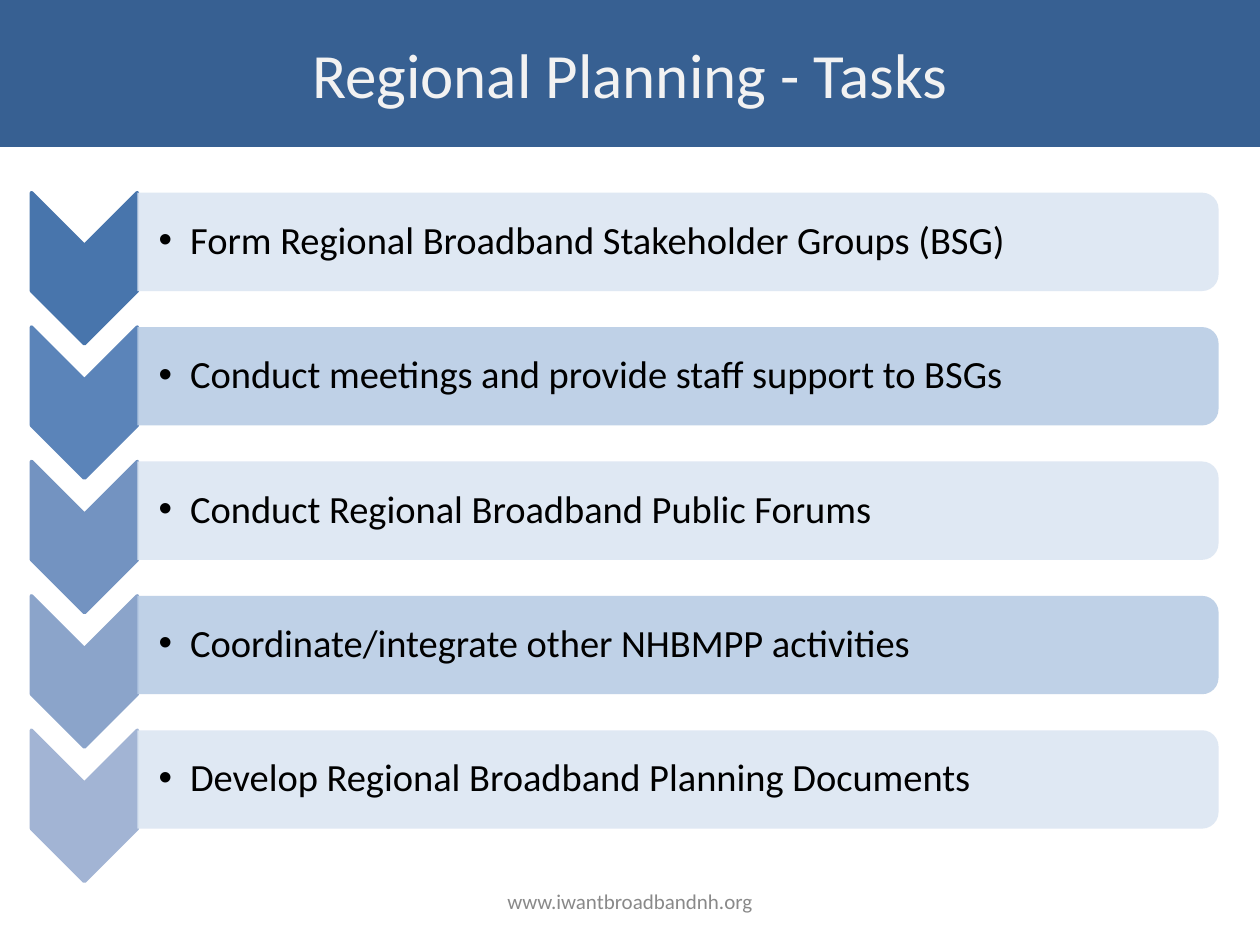
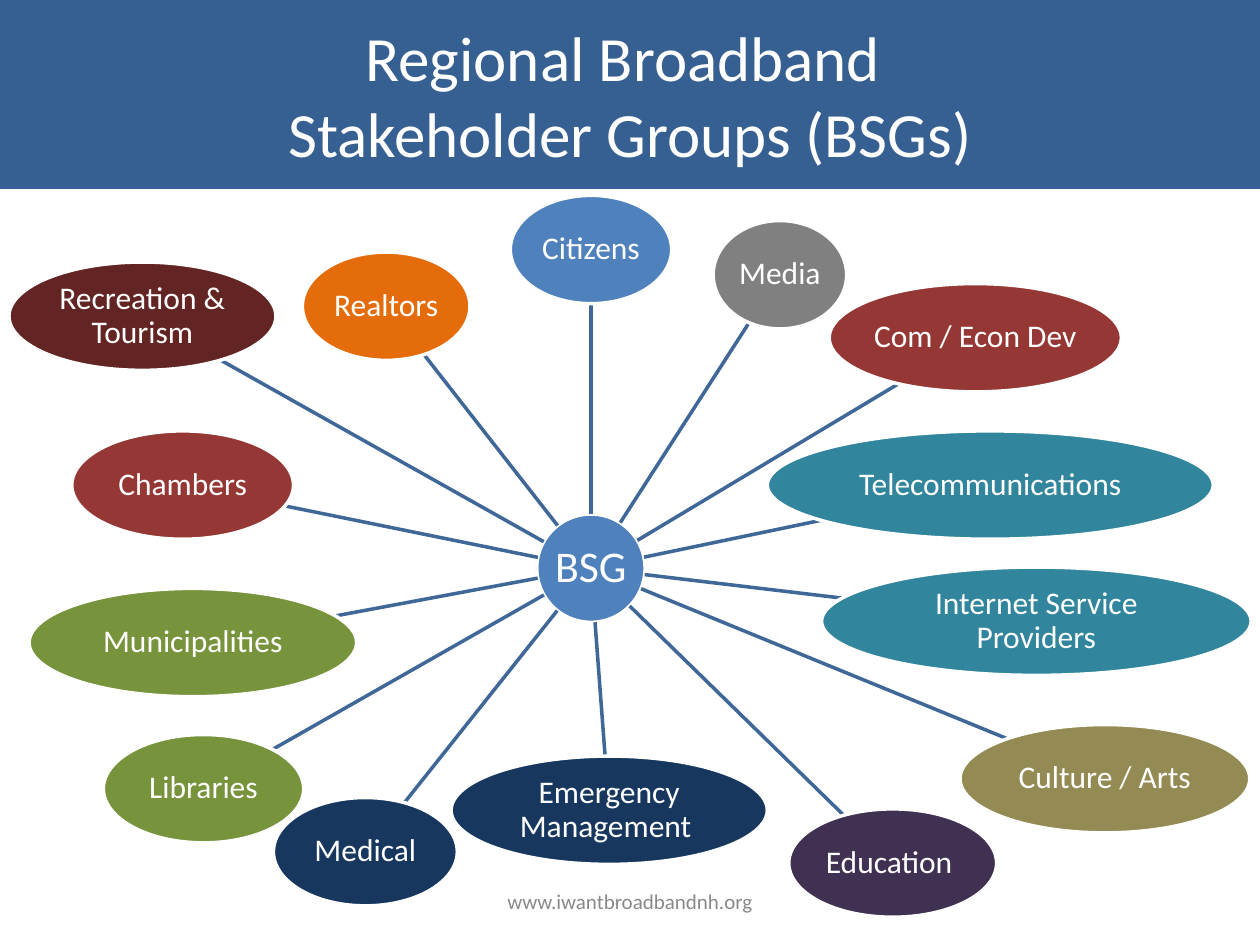
"""Build two slides on regional broadband planning: a task list and a stakeholder map."""
from dataclasses import dataclass
from math import hypot

from lxml import etree
from pptx import Presentation
from pptx.dml import color
from pptx.enum import shapes, text
from pptx.oxml import ns
from pptx.util import Pt

FONT = "Calibri"
WIDE, HIGH = 720, 540
HUE = {
    "band": "376092", "white": "FFFFFF", "pale": "F2F2F2", "black": "000000",
    "foot": "898989", "spoke": "3F6797", "ice": "DCE6F2", "sky": "B9CDE5",
    "blue": "4F81BD", "gray": "808080", "red": "953735", "teal": "31859C",
    "tan": "948A54", "plum": "403152", "navy": "17375E", "green": "77933C",
    "wine": "632523", "gold": "E46C0A",
    "step1": "4875AC", "step2": "5B84B9", "step3": "7393C1",
    "step4": "8BA4CA", "step5": "A2B4D4",
}
KIND = shapes.MSO_SHAPE
MID = text.PP_ALIGN.CENTER

ROW_TOP, ROW_STEP = 138.2, 76.8
BAR_LEFT, BAR_WIDE, BAR_HIGH = 78.5, 617.8, 56.2
TIP_MID, TIP_LONG, TIP_WIDE, TIP_DROP = 48.2, 86.4, 60.5, 15.1
NODE_HIGH = 61.9


@dataclass
class Task:
    label: str
    tip: str
    bar: str


@dataclass
class Node:
    label: str
    x: float
    y: float
    wide: float
    hue: str
    size: float = 18
    inset: float = 0.9

    def edge(self, dx: float, dy: float) -> tuple[float, float]:
        """Return the point where the outline meets the direction (dx, dy)."""
        reach = 1 / hypot(dx / (self.wide / 2), dy / (NODE_HIGH / 2))
        return self.x + dx * reach, self.y + dy * reach


TASKS = [
    Task("Form Regional Broadband Stakeholder Groups (BSG)", "step1", "ice"),
    Task("Conduct meetings and provide staff support to BSGs", "step2", "sky"),
    Task("Conduct Regional Broadband Public Forums", "step3", "ice"),
    Task("Coordinate/integrate other NHBMPP activities", "step4", "sky"),
    Task("Develop Regional Broadband Planning Documents", "step5", "ice"),
]
HUB = Node("BSG", 337.7, 324.7, 61.9, "blue", 25, 1.4)
GROUPS = [
    Node("Citizens", 337.7, 142.6, 92.2, "blue"),
    Node("Media", 445.7, 157, 76.3, "gray"),
    Node("Com / Econ Dev", 557.3, 193, 167, "red"),
    Node("Telecommunications", 565.9, 277.2, 254.9, "teal"),
    Node("Internet Service Providers", 592.2, 355, 245.5, "teal"),
    Node("Culture / Arts", 631.4, 445, 165.6, "tan"),
    Node("Education ", 510.1, 493.2, 118.8, "plum"),
    Node("Emergency Management ", 348.1, 463, 180.7, "navy"),
    Node("Medical", 208.8, 486.7, 105.1, "navy"),
    Node("Libraries", 116.3, 450.7, 114.5, "green"),
    Node("Municipalities", 110.2, 367.2, 187.2, "green"),
    Node("Chambers", 104.4, 277.2, 126.7, "red"),
    Node("Recreation & Tourism", 81.4, 180.7, 152.6, "wine"),
    Node("Realtors", 220.7, 175, 95.8, "gold"),
]


def tint(hue: str) -> color.RGBColor:
    """Return a named colour."""
    return color.RGBColor.from_string(HUE[hue])


def add_block(slide, kind, x: float, y: float, wide: float, high: float,
              hue: str, rim: str | None = None, turn: float = 0):
    """Draw a filled shape around the centre (x, y)."""
    block = slide.shapes.add_shape(
        kind, Pt(x - wide / 2), Pt(y - high / 2), Pt(wide), Pt(high))
    block.shadow.inherit = False
    block.rotation = turn
    block.fill.solid()
    block.fill.fore_color.rgb = tint(hue)
    if rim:
        block.line.color.rgb = tint(rim)
        block.line.width = Pt(2)
    else:
        block.line.fill.background()
    return block


def write(shape, words: str, size: float, hue: str, align=MID,
          space: float | None = None, inset: float | None = None) -> None:
    """Put styled, vertically centred text in a shape."""
    frame = shape.text_frame
    frame.text = words
    frame.word_wrap = True
    frame.vertical_anchor = text.MSO_ANCHOR.MIDDLE
    if inset is not None:
        frame.margin_left = frame.margin_right = Pt(inset)
        frame.margin_top = frame.margin_bottom = Pt(inset)
    for para in frame.paragraphs:
        para.alignment = align
        if space:
            para.line_spacing = space
        for run in para.runs:
            run.font.name = FONT
            run.font.size = Pt(size)
            run.font.color.rgb = tint(hue)


def add_page(deck, title: str, high: float, hue: str):
    """Add a blank slide with its title band and footer."""
    slide = deck.slides.add_slide(deck.slide_layouts[6])
    band = add_block(slide, KIND.RECTANGLE, WIDE / 2, high / 2, WIDE, high, "band")
    write(band, title, 36, hue)
    foot = slide.shapes.add_textbox(Pt(246), Pt(500.4), Pt(228), Pt(28.8))
    write(foot, "www.iwantbroadbandnh.org", 12, "foot")
    return slide


def add_task(slide, task: Task, y: float) -> None:
    """Draw a chevron, its bar and the bulleted task."""
    add_block(slide, KIND.CHEVRON, TIP_MID, y + TIP_DROP, TIP_LONG, TIP_WIDE,
              task.tip, task.tip, 90)
    bar = add_block(slide, KIND.ROUND_2_SAME_RECTANGLE, BAR_LEFT + BAR_WIDE / 2, y,
                    BAR_HIGH, BAR_WIDE, task.bar, turn=90)
    shade = bar.fill._xPr.find(".//" + ns.qn("a:srgbClr"))
    etree.SubElement(shade, ns.qn("a:alpha")).set("val", "90000")
    box = slide.shapes.add_textbox(Pt(BAR_LEFT), Pt(y - 25.2), Pt(615), Pt(50.4))
    write(box, task.label, 22, "black", text.PP_ALIGN.LEFT, 0.9, 1.4)
    box.text_frame.margin_left = Pt(12.2)
    props = box.text_frame.paragraphs[0]._p.get_or_add_pPr()
    props.set("marL", str(Pt(18)))
    props.set("indent", str(-Pt(18)))
    etree.SubElement(props, ns.qn("a:buFont")).set("typeface", "Arial")
    etree.SubElement(props, ns.qn("a:buChar")).set("char", "•")


def add_node(slide, node: Node) -> None:
    """Draw a labelled ellipse."""
    oval = add_block(slide, KIND.OVAL, node.x, node.y, node.wide, NODE_HIGH,
                     node.hue, "white")
    write(oval, node.label, node.size, "white", space=0.9, inset=node.inset)


def add_spoke(slide, hub: Node, node: Node) -> None:
    """Join the outlines of two nodes along the line between their centres."""
    dx, dy = node.x - hub.x, node.y - hub.y
    ends = *hub.edge(dx, dy), *node.edge(-dx, -dy)
    spoke = slide.shapes.add_connector(
        shapes.MSO_CONNECTOR.STRAIGHT, *(Pt(end) for end in ends))
    spoke.line.color.rgb = tint("spoke")
    spoke.line.width = Pt(2)
    etree.SubElement(spoke._element.spPr, ns.qn("a:effectLst"))


def main() -> None:
    """Build and save the deck."""
    deck = Presentation()
    deck.slide_width, deck.slide_height = Pt(WIDE), Pt(HIGH)

    plan = add_page(deck, "Regional Planning - Tasks", 84, "pale")
    for row, task in enumerate(TASKS):
        add_task(plan, task, ROW_TOP + row * ROW_STEP)

    web = add_page(deck, "Regional Broadband \nStakeholder Groups (BSGs)", 108, "white")
    add_node(web, HUB)
    for node in GROUPS:
        add_spoke(web, HUB, node)
        add_node(web, node)

    deck.save("out.pptx")


if __name__ == "__main__":
    main()
